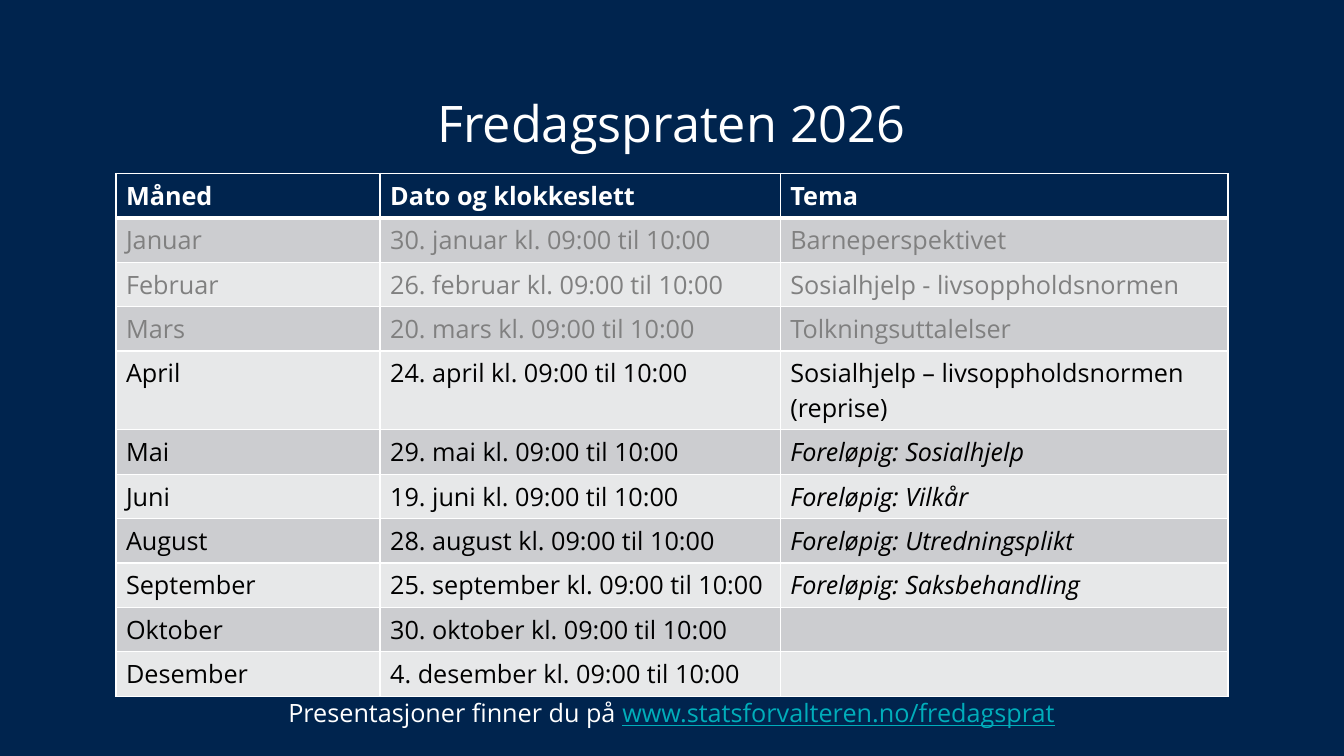
from lxml import etree
from pptx import Presentation
from pptx.dml.color import RGBColor
from pptx.enum.text import MSO_ANCHOR, PP_ALIGN
from pptx.oxml.ns import qn
from pptx.util import Inches, Pt

BOTTOM = MSO_ANCHOR.BOTTOM
CENTER = PP_ALIGN.CENTER

FONT = "Open Sans"
NAVY, WHITE, BLACK, GRAY, TEAL = "00244E", "FFFFFF", "000000", "808080", "00ADBA"
BANDS = ("CCCDD0", "E7E8E9")
LEFT, WIDTH = 1.15, 11.02
COLUMN_WIDTHS = (2.62, 3.97, 4.44)
ROW_HEIGHT = 0.41

HEADER = ("Måned", "Dato og klokkeslett", "Tema")
TIME = "kl. 09:00 til 10:00"
PAST_MONTHS = ("Januar", "Februar", "Mars")
TENTATIVE = "Foreløpig:"
SESSIONS = (
    ("Januar", 30, "Barneperspektivet"),
    ("Februar", 26, "Sosialhjelp - livsoppholdsnormen"),
    ("Mars", 20, "Tolkningsuttalelser"),
    ("April", 24, "Sosialhjelp – livsoppholdsnormen (reprise)"),
    ("Mai", 29, f"{TENTATIVE} Sosialhjelp"),
    ("Juni", 19, f"{TENTATIVE} Vilkår"),
    ("August", 28, f"{TENTATIVE} Utredningsplikt"),
    ("September", 25, f"{TENTATIVE} Saksbehandling"),
    ("Oktober", 30, ""),
    ("Desember", 4, ""),
)


def color(hex_string):
    return RGBColor.from_string(hex_string)


def set_font(font, size, hex_string, bold=False, italic=False):
    font.name = FONT
    font.size = Pt(size)
    font.bold = bold
    font.italic = italic
    font.color.rgb = color(hex_string)


def set_borders(cell, bottom_width):
    """Draw white cell borders, 1 pt wide except at the bottom."""
    properties = cell._tc.get_or_add_tcPr()
    widths = {"a:lnL": 1, "a:lnR": 1, "a:lnT": 1, "a:lnB": bottom_width}
    for position, (tag, width) in enumerate(widths.items()):
        line = etree.Element(qn(tag), w=str(Pt(width)))
        fill = etree.SubElement(line, qn("a:solidFill"))
        etree.SubElement(fill, qn("a:srgbClr"), val=WHITE)
        properties.insert(position, line)


def fill_cell(cell, text, fill, text_color, bold=False, bottom_width=1):
    cell.fill.solid()
    cell.fill.fore_color.rgb = color(fill)
    set_borders(cell, bottom_width)
    cell.text = text
    set_font(cell.text_frame.paragraphs[0].font, 18, text_color, bold,
             italic=text.startswith(TENTATIVE))


def add_title(slide, left, top, width, height):
    title = slide.shapes.title
    title.left, title.top = Inches(left), Inches(top)
    title.width, title.height = Inches(width), Inches(height)
    frame = title.text_frame
    frame.vertical_anchor = BOTTOM
    frame.margin_bottom = Inches(0.61)
    frame.text = "Fredagspraten 2026"
    paragraph = frame.paragraphs[0]
    paragraph.alignment = CENTER
    paragraph.line_spacing = 0.9
    set_font(paragraph.font, 36, WHITE)


def add_schedule(slide, left, top, width):
    row_count = len(SESSIONS) + 1
    table = slide.shapes.add_table(
        row_count, len(HEADER), Inches(left), Inches(top),
        Inches(width), Inches(ROW_HEIGHT * row_count)).table
    for column, column_width in zip(table.columns, COLUMN_WIDTHS):
        column.width = Inches(column_width)
    for column, heading in enumerate(HEADER):
        fill_cell(table.cell(0, column), heading, NAVY, WHITE, bold=True, bottom_width=3)
    for index, (month, day, topic) in enumerate(SESSIONS):
        text_color = GRAY if month in PAST_MONTHS else BLACK
        texts = (month, f"{day}. {month.lower()} {TIME}", topic)
        for column, text in enumerate(texts):
            fill_cell(table.cell(index + 1, column), text, BANDS[index % 2], text_color)


def add_footer(slide, left, top, width, height):
    box = slide.shapes.add_textbox(Inches(left), Inches(top), Inches(width), Inches(height))
    box.text_frame.word_wrap = True
    paragraph = box.text_frame.paragraphs[0]
    paragraph.alignment = CENTER
    set_font(paragraph.font, 18, WHITE)
    paragraph.add_run().text = "Presentasjoner finner du på "
    address = paragraph.add_run()
    address.text = "www.statsforvalteren.no/fredagsprat"
    set_font(address.font, 18, TEAL)
    address.font.underline = True


def main():
    presentation = Presentation()
    presentation.slide_width, presentation.slide_height = Inches(13.33), Inches(7.5)
    slide = presentation.slides.add_slide(presentation.slide_layouts[5])
    slide.background.fill.solid()
    slide.background.fill.fore_color.rgb = color(NAVY)
    add_title(slide, LEFT, 0.95, WIDTH, 1.18)
    add_schedule(slide, LEFT, 1.72, WIDTH)
    add_footer(slide, LEFT, 6.87, WIDTH, 0.4)
    presentation.save("out.pptx")


if __name__ == "__main__":
    main()
